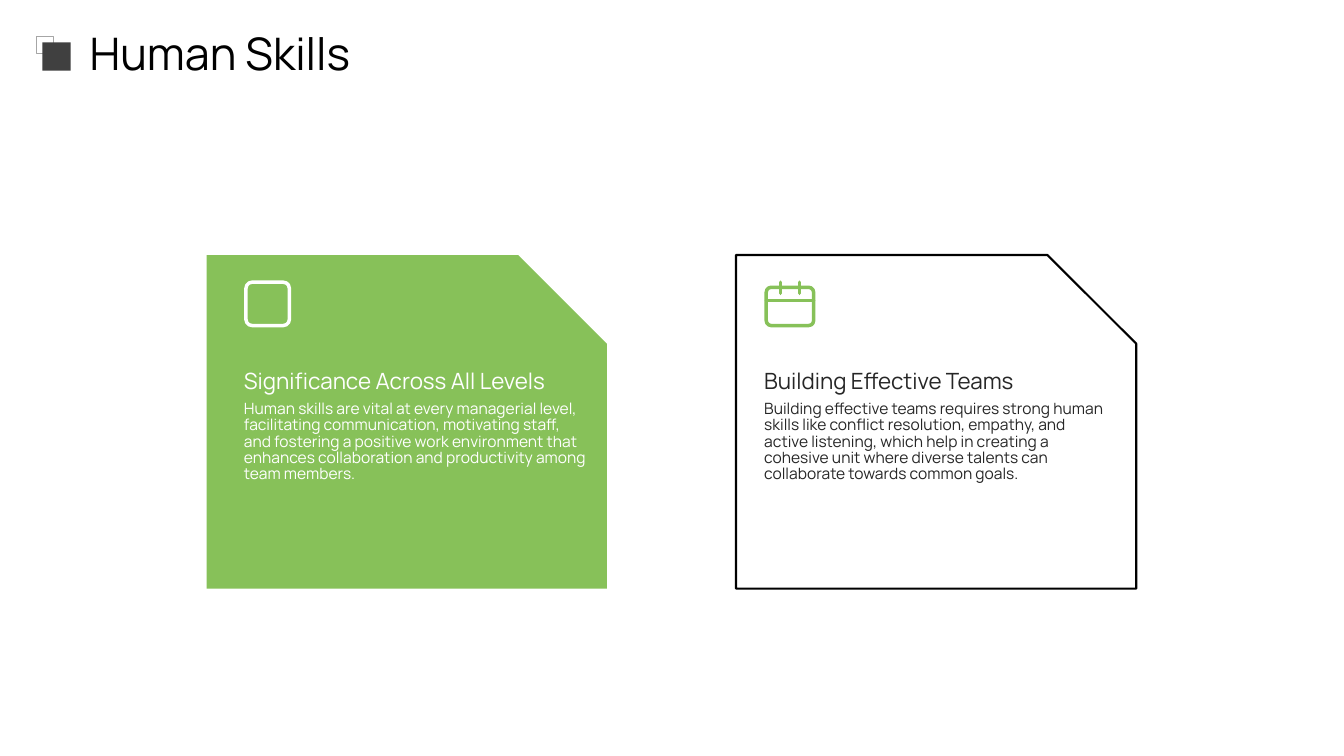
from pptx import Presentation
from pptx.dml.color import RGBColor
from pptx.enum.shapes import MSO_CONNECTOR, MSO_SHAPE
from pptx.enum.text import MSO_ANCHOR
from pptx.util import Inches, Pt
from lxml import etree

RECT, ROUND, SNIP = MSO_SHAPE.RECTANGLE, MSO_SHAPE.ROUNDED_RECTANGLE, MSO_SHAPE.SNIP_1_RECTANGLE
TOP, MIDDLE, BOTTOM = MSO_ANCHOR.TOP, MSO_ANCHOR.MIDDLE, MSO_ANCHOR.BOTTOM
NS = "http://schemas.openxmlformats.org/drawingml/2006/main"

# Content
FONT = "Manrope"
GREEN, WHITE, BLACK, DARK = "87C159", "FFFFFF", "000000", "262626"
TITLE = "Human Skills"
CARDS = [
    dict(left=7.3, inset=7.58, fill=WHITE, line=BLACK, ink=DARK,
         head="Building Effective Teams",
         body="Building effective teams requires strong human skills like conflict "
              "resolution, empathy, and active listening, which help in creating a "
              "cohesive unit where diverse talents can collaborate towards common goals."),
    dict(left=2.05, inset=2.42, fill=GREEN, line=None, ink=WHITE,
         head="Significance Across All Levels",
         body="Human skills are vital at every managerial level, facilitating "
              "communication, motivating staff, and fostering a positive work environment "
              "that enhances collaboration and productivity among team members."),
]
CARD_TOP, CARD_W, CARD_H = 2.53, 3.97, 3.31
TEXT_W, STROKE = 3.4, 2.5

# Pencil outline: one point is a straight step, three points a curve
NIB_START = (2.65, 2.91)
NIB = [
    [(2.68, 2.88), (2.73, 2.88), (2.76, 2.91)],
    [(2.79, 2.94), (2.79, 2.99), (2.76, 3.02)],
    [(2.67, 3.11)],
    [(2.64, 3.14), (2.57, 3.14), (2.53, 3.14)],
    [(2.53, 3.09), (2.54, 3.02), (2.56, 3.0)],
]

prs = Presentation()
prs.slide_width, prs.slide_height = Inches(13.33), Inches(7.5)
slide = prs.slides.add_slide(prs.slide_layouts[6])
shapes = slide.shapes


def rgb(code):
    return RGBColor.from_string(code)


def paint(shape, fill=None, line=None, width=1):
    shape.shadow.inherit = False
    if fill:
        shape.fill.solid()
        shape.fill.fore_color.rgb = rgb(fill)
    else:
        shape.fill.background()
    if line:
        shape.line.color.rgb = rgb(line)
        shape.line.width = Pt(width)
    else:
        shape.line.fill.background()


def block(kind, box, adj=None, **look):
    shape = shapes.add_shape(kind, *map(Inches, box))
    if adj is not None:
        shape.adjustments[0] = adj
    paint(shape, **look)


def stroke(x1, y1, x2, y2, color):
    line = shapes.add_connector(MSO_CONNECTOR.STRAIGHT, *map(Inches, (x1, y1, x2, y2)))
    line.line.color.rgb = rgb(color)
    line.line.width = Pt(STROKE)
    line.line._get_or_add_ln().set("cap", "rnd")
    etree.SubElement(line._element.spPr, f"{{{NS}}}effectLst")


def write(text, box, size, color, anchor=TOP, gap=1.0):
    frame = shapes.add_textbox(*map(Inches, box)).text_frame
    frame.word_wrap = True
    frame.vertical_anchor = anchor
    frame.margin_left = frame.margin_right = frame.margin_top = frame.margin_bottom = 0
    para = frame.paragraphs[0]
    para.line_spacing = gap
    run = para.add_run()
    run.text = text
    run.font.name, run.font.size = FONT, Pt(size)
    run.font.color.rgb = rgb(color)


def trace(start, steps, parts=10):
    points, here = [], start
    for step in steps:
        if len(step) == 1:
            points.append(step[0])
        else:
            curve = [here, *step]
            for i in range(1, parts + 1):
                t = i / parts
                mix = ((1 - t) ** 3, 3 * t * (1 - t) ** 2, 3 * t * t * (1 - t), t ** 3)
                points.append(tuple(sum(m * p[k] for m, p in zip(mix, curve)) for k in (0, 1)))
        here = step[-1]
    return points


def calendar():
    block(ROUND, (7.6, 2.85, 0.47, 0.38), adj=0.13, line=GREEN, width=STROKE)
    stroke(7.6, 2.98, 8.07, 2.98, GREEN)
    for x in (7.74, 7.93):
        stroke(x, 2.8, x, 2.91, GREEN)


def pencil():
    block(ROUND, (2.44, 2.8, 0.43, 0.43), adj=0.14, line=WHITE, width=STROKE)
    form = shapes.build_freeform(*NIB_START, scale=Inches(1))
    form.add_line_segments(trace(NIB_START, NIB), close=True)
    paint(form.convert_to_shape(), line=WHITE, width=STROKE)


# Cards with icons and text
for card, icon in zip(CARDS, (calendar, pencil)):
    block(SNIP, (card["left"], CARD_TOP, CARD_W, CARD_H), adj=0.266,
          fill=card["fill"], line=card["line"], width=1.5)
    icon()
    write(card["head"], (card["inset"], 3.25, TEXT_W, 0.66), 16, card["ink"], BOTTOM)
    write(card["body"], (card["inset"], 3.98, TEXT_W, 1.64), 11.1, card["ink"], gap=0.88)

# Title with its square marker
write(TITLE, (0.89, 0.29, 11.9, 0.47), 32, BLACK, MIDDLE)
block(RECT, (0.36, 0.36, 0.17, 0.17), line="A6A6A6")
block(RECT, (0.42, 0.42, 0.28, 0.28), fill="404040")

prs.save("out.pptx")
